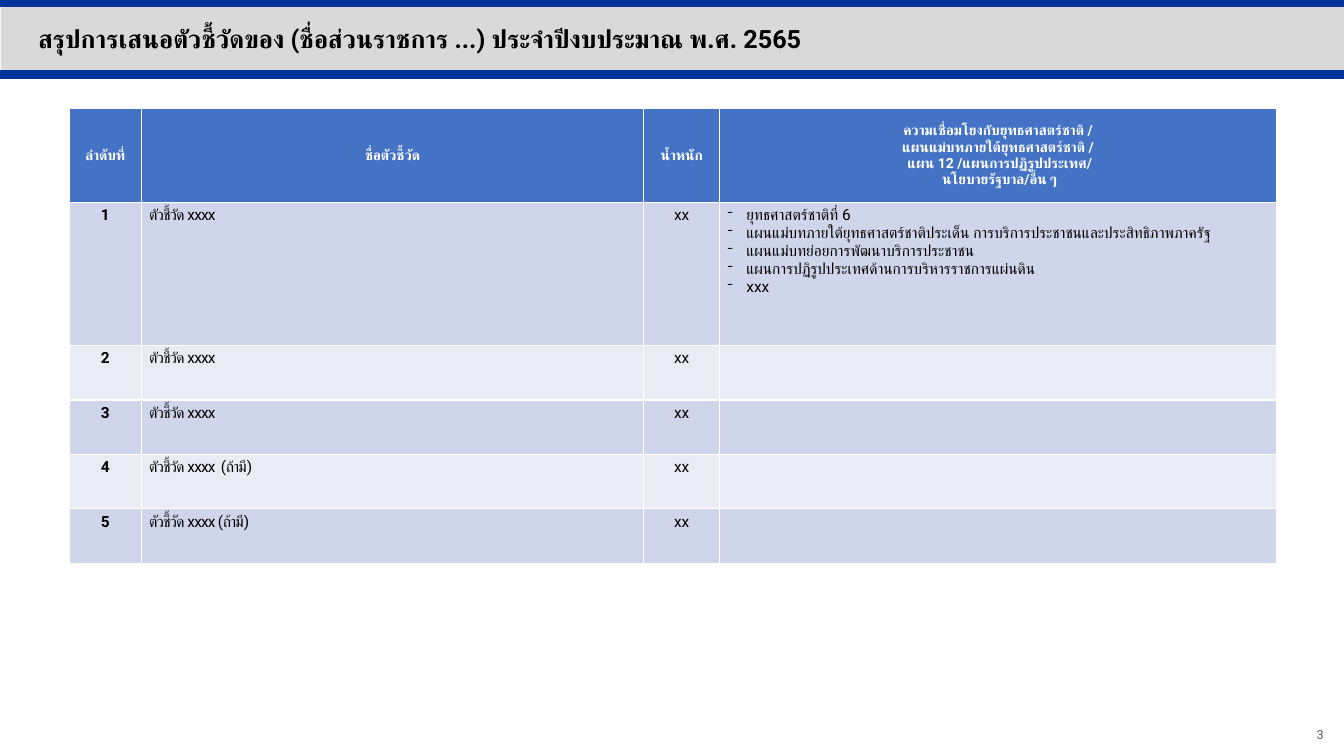
from lxml import etree
from pptx import Presentation
from pptx.dml.color import RGBColor
from pptx.enum.shapes import MSO_CONNECTOR, MSO_SHAPE
from pptx.enum.text import MSO_ANCHOR, MSO_AUTO_SIZE, PP_ALIGN
from pptx.oxml.ns import qn
from pptx.util import Cm, Pt

NAVY = RGBColor(0x00, 0x33, 0x99)
BLUE = RGBColor(0x44, 0x72, 0xC4)
BAND_DARK = RGBColor(0xCF, 0xD5, 0xEA)
BAND_LIGHT = RGBColor(0xE9, 0xEB, 0xF5)
LIGHT_GRAY = RGBColor(0xD9, 0xD9, 0xD9)
DARK_GRAY = RGBColor(0x59, 0x59, 0x59)
WHITE = RGBColor(0xFF, 0xFF, 0xFF)
BLACK = RGBColor(0x00, 0x00, 0x00)

RECTANGLE = MSO_SHAPE.RECTANGLE
STRAIGHT = MSO_CONNECTOR.STRAIGHT
TOP, MIDDLE = MSO_ANCHOR.TOP, MSO_ANCHOR.MIDDLE
LEFT, CENTER, RIGHT = PP_ALIGN.LEFT, PP_ALIGN.CENTER, PP_ALIGN.RIGHT
NO_AUTO_SIZE = MSO_AUTO_SIZE.NONE

FONT = "Roboto"
HEADERS = [
    ["ลำดับที่"],
    ["ชื่อตัวชี้วัด"],
    ["น้ำหนัก"],
    [
        "ความเชื่อมโยงกับยุทธศาสตร์ชาติ /",
        "แผนแม่บทภายใต้ยุทธศาสตร์ชาติ /",
        " แผน 12 /แผนการปฏิรูปประเทศ/",
        " นโยบายรัฐบาล/อื่น ๆ",
    ],
]
INDICATORS = [
    "ตัวชี้วัด xxxx",
    "ตัวชี้วัด xxxx",
    "ตัวชี้วัด xxxx",
    "ตัวชี้วัด xxxx  (ถ้ามี)",
    "ตัวชี้วัด xxxx (ถ้ามี)",
]
LINKED_PLANS = [
    "ยุทธศาสตร์ชาติที่ 6",
    "แผนแม่บทภายใต้ยุทธศาสตร์ชาติประเด็น การบริการประชาชนและประสิทธิภาพภาครัฐ",
    "แผนแม่บทย่อยการพัฒนาบริการประชาชน",
    "แผนการปฏิรูปประเทศด้านการบริหารราชการแผ่นดิน",
    "xxx",
]
COLUMN_WIDTHS = [1.83, 12.65, 1.92, 14.02]
ROW_HEIGHTS = [2.36, 3.61] + [1.37] * 4


def add_text(paragraph, text, size, color, bold=False, alignment=LEFT):
    paragraph.alignment = alignment
    run = paragraph.add_run()
    run.text = text
    run.font.name = FONT
    run.font.size = Pt(size)
    run.font.bold = bold
    run.font.color.rgb = color
    properties = run.font._element
    for script in ("a:ea", "a:cs"):
        etree.SubElement(properties, qn(script), typeface=FONT)
    return run


def set_indent(paragraph, indent, bullet=None):
    properties = paragraph._p.get_or_add_pPr()
    properties.set("marL", str(indent))
    properties.set("indent", str(-indent))
    if bullet:
        etree.SubElement(properties, qn("a:buFont"), typeface=FONT)
        etree.SubElement(properties, qn("a:buChar"), char=bullet)


presentation = Presentation()
presentation.slide_width = Cm(33.87)
presentation.slide_height = Cm(19.05)
slide = presentation.slides.add_slide(presentation.slide_layouts[5])
shapes = slide.shapes

banner = shapes.add_shape(RECTANGLE, Cm(0.02), Cm(0.12), Cm(33.85), Cm(1.73))
banner.shadow.inherit = False
banner.fill.solid()
banner.fill.fore_color.rgb = LIGHT_GRAY
banner.line.fill.background()

for rule_top in (1.88, 0.06):
    rule = shapes.add_connector(STRAIGHT, Cm(0), Cm(rule_top), Cm(33.87), Cm(rule_top))
    rule.line.color.rgb = NAVY
    rule.line.width = Pt(6)
    etree.SubElement(rule._element.spPr, qn("a:effectLst"))

table = shapes.add_table(
    len(ROW_HEIGHTS), len(COLUMN_WIDTHS),
    Cm(1.74), Cm(2.74), Cm(sum(COLUMN_WIDTHS)), Cm(sum(ROW_HEIGHTS)),
).table
for column, width in zip(table.columns, COLUMN_WIDTHS):
    column.width = Cm(width)
for row_index, height in enumerate(ROW_HEIGHTS):
    table.rows[row_index].height = Cm(height)
    for cell in table.rows[row_index].cells:
        cell.margin_left = cell.margin_right = Cm(0.19)
        cell.margin_top = cell.margin_bottom = Cm(0.1)
        cell.fill.solid()
        if row_index == 0:
            cell.fill.fore_color.rgb = BLUE
        else:
            cell.fill.fore_color.rgb = BAND_DARK if row_index % 2 else BAND_LIGHT

for column_index, lines in enumerate(HEADERS):
    cell = table.cell(0, column_index)
    cell.vertical_anchor = MIDDLE
    paragraph = cell.text_frame.paragraphs[0]
    for line_index, line in enumerate(lines):
        if line_index:
            paragraph.add_line_break()
        add_text(paragraph, line, 10, WHITE, True, CENTER)

for number, indicator in enumerate(INDICATORS, 1):
    number_paragraph, name_paragraph, weight_paragraph = [
        table.cell(number, column_index).text_frame.paragraphs[0]
        for column_index in range(3)
    ]
    add_text(number_paragraph, str(number), 11, BLACK, True, CENTER)
    name_run = add_text(name_paragraph, indicator, 11, BLACK)
    name_run.font._element.set("spc", "-60")
    add_text(weight_paragraph, "xx", 11, BLACK, False, CENTER)

plans_frame = table.cell(1, 3).text_frame
for plan_index, plan in enumerate(LINKED_PLANS):
    paragraph = plans_frame.add_paragraph() if plan_index else plans_frame.paragraphs[0]
    set_indent(paragraph, Cm(0.48), "⁻")
    add_text(paragraph, plan, 11, BLACK)

title = shapes.title
title.left, title.top, title.width, title.height = Cm(0.71), Cm(0.46), Cm(28.63), Cm(1.02)
title.text_frame.auto_size = NO_AUTO_SIZE
title.text_frame.vertical_anchor = TOP
title_paragraph = title.text_frame.paragraphs[0]
set_indent(title_paragraph, Cm(1.68))
add_text(
    title_paragraph,
    "สรุปการเสนอตัวชี้วัดของ (ชื่อส่วนราชการ ...) ประจำปีงบประมาณ พ.ศ. 2565",
    18, BLACK, True,
)
title._element.getparent().append(title._element)

page_number = shapes.add_textbox(Cm(25.93), Cm(18.01), Cm(7.62), Cm(1.02))
page_frame = page_number.text_frame
page_frame.word_wrap = True
page_frame.vertical_anchor = MIDDLE
page_frame.margin_left = page_frame.margin_right = Cm(0.19)
page_frame.margin_top = page_frame.margin_bottom = Cm(0.1)
add_text(page_frame.paragraphs[0], "3", 9, DARK_GRAY, False, RIGHT)

presentation.save("out.pptx")
